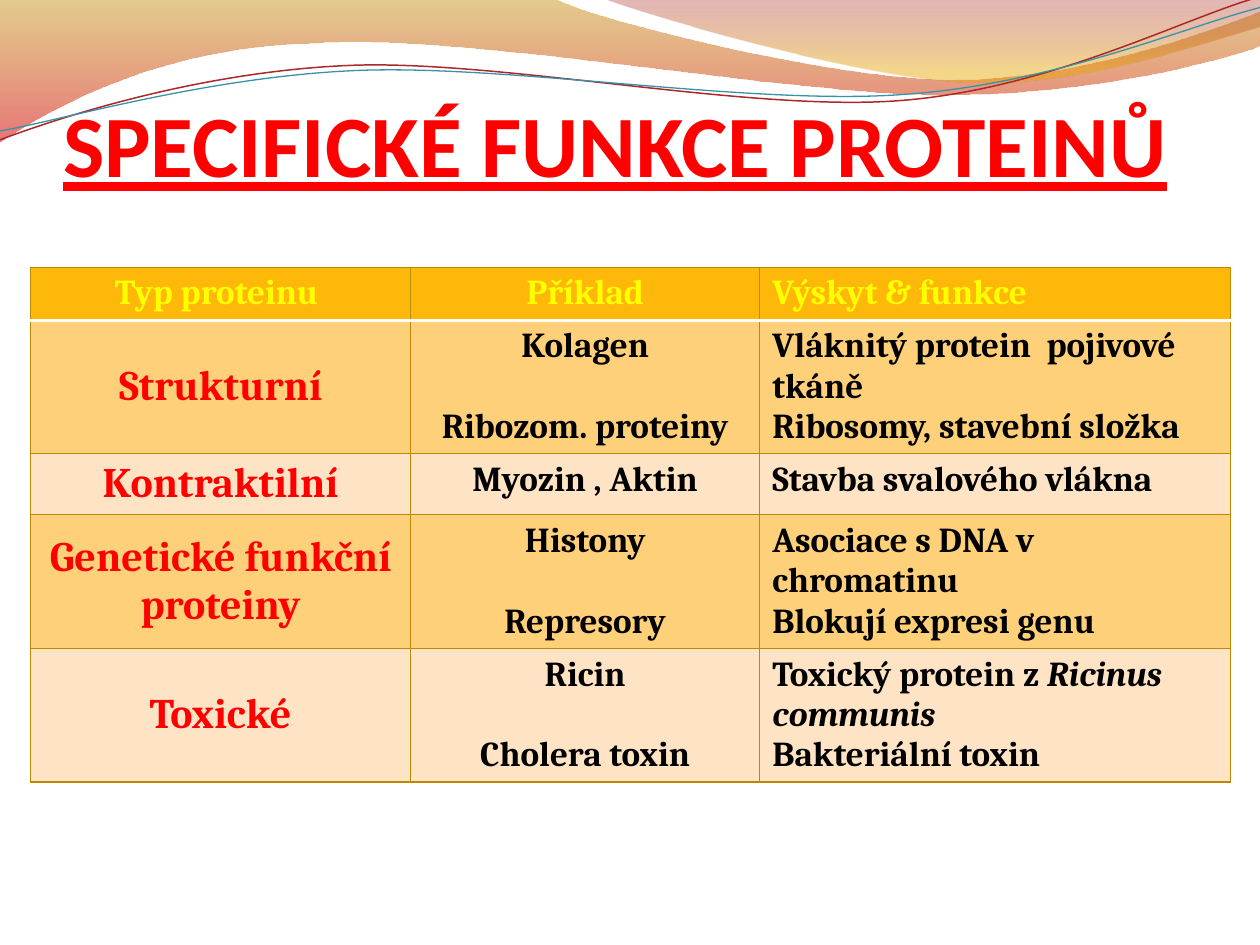
from dataclasses import dataclass

from lxml import etree
from pptx import Presentation, util as u
from pptx.dml.color import RGBColor
from pptx.enum import text as t
from pptx.oxml import ns

WIDE, HIGH = 10, 7.5


@dataclass(frozen=True)
class Theme:
    head: str = "Calibri"
    body: str = "Cambria"
    red: str = "FF0000"
    yellow: str = "FFFF00"
    black: str = "000000"
    white: str = "FFFFFF"
    amber: str = "FEB80A"
    dark: str = "FFD07A"
    light: str = "FFE3C5"
    edge: str = "BF8905"
    title: int = 50
    kind: int = 24
    cell: int = 20


THEME = Theme()

# Each wave: start point, curves (two handles and an end) or straight ends, gradient stops
WAVES = [
    ((0, 0), [(4.4, -0.01), (4.76, 0.17, 6.64, 0.63, 7.58, 0.63),
              (8.53, 0.63, 9.58, 0.26, 10, 0.09), (10.01, 0.36),
              (9.83, 0.44, 8.7, 0.76, 7.46, 0.75),
              (6.22, 0.75, 3.82, 0.28, 2.57, 0.34),
              (1.29, 0.36, 0.46, 0.83, -0.01, 1.13), (0, 0)],
     [(0, "C38B00", 45), (1, "D60305", 55)]),
    ((4.79, -0.01), [(5.09, 0.11, 6.82, 0.62, 7.69, 0.65),
                     (8.56, 0.69, 9.61, 0.32, 10, 0.21), (10, 0), (4.79, -0.01)],
     [(0, "A11112", 30), (0.8, "E9A600", 45)]),
]
STRANDS = [
    ((0, 1.11), [(0.48, 0.93, 1.58, 0.57, 2.77, 0.52),
                 (3.95, 0.47, 5.93, 0.89, 7.13, 0.8),
                 (8.33, 0.71, 9.38, 0.15, 9.98, -0.02)], "AC2829", 0.85),
    ((0, 1.04), [(0.47, 0.96, 1.64, 0.61, 2.83, 0.56),
                 (4.03, 0.51, 5.97, 0.84, 7.17, 0.75),
                 (8.36, 0.67, 9.41, 0.21, 10, 0.06)], "3891A7", 0.75),
]

# A cell is a list of paragraphs; text between underscores is italic
HEADS = [["Typ proteinu "], ["Příklad"], ["Výskyt & funkce"]]
ROWS = [
    [["Strukturní"], ["Kolagen", "Ribozom. proteiny"],
     ["Vláknitý protein  pojivové tkáně", "Ribosomy, stavební složka"]],
    [["Kontraktilní"], ["Myozin , Aktin"], ["Stavba svalového vlákna"]],
    [["Genetické funkční proteiny"], ["Histony", "Represory"],
     ["Asociace s DNA v chromatinu", "Blokují expresi genu"]],
    [["Toxické"], ["Ricin", "Cholera toxin"],
     ["Toxický protein z _Ricinus_", "_communis_", "Bakteriální toxin"]],
]
COLS = [3.02, 2.77, 3.74]
TALL = 0.41


def rgb(code):
    return RGBColor.from_string(code)


def bend(shape, parts):
    """Join each curve's two handles and end into one Bezier segment."""
    lines = iter(shape.element.spPr.findall(".//" + ns.qn("a:lnTo")))
    for part in parts:
        first = next(lines)
        if len(part) == 6:
            first.tag = ns.qn("a:cubicBezTo")
            for _ in range(2):
                extra = next(lines)
                first.append(extra[0])
                extra.getparent().remove(extra)


def outline(slide, start, parts, close):
    spots = [(u.Inches(x), u.Inches(y)) for part in parts
             for x, y in zip(part[::2], part[1::2])]
    pen = slide.shapes.build_freeform(*[u.Inches(n) for n in start])
    pen.add_line_segments(spots, close=close)
    shape = pen.convert_to_shape()
    shape.shadow.inherit = False
    bend(shape, parts)
    return shape


def add_wave(slide, start, parts, stops):
    shape = outline(slide, start, parts, True)
    shape.line.fill.background()
    shape.fill.gradient()
    shape.fill.gradient_angle = 270
    tints = shape.element.spPr.findall(".//" + ns.qn("a:gs"))
    for stop, tint, (place, code, alpha) in zip(shape.fill.gradient_stops, tints, stops):
        stop.position = place
        stop.color.rgb = rgb(code)
        etree.SubElement(tint[0], ns.qn("a:alpha"), val=str(alpha * 1000))


def add_strand(slide, start, parts, code, width):
    shape = outline(slide, start, parts, False)
    shape.fill.background()
    shape.line.color.rgb = rgb(code)
    shape.line.width = u.Pt(width)


def add_run(para, words, font, size, code, italic=False):
    run = para.add_run()
    run.text = words
    run.font.name, run.font.size = font, u.Pt(size)
    run.font.bold, run.font.italic = True, italic
    run.font.color.rgb = rgb(code)
    return run


def add_title(slide, words):
    title = slide.shapes.title
    title.left, title.top = u.Inches(0.05 * WIDE), u.Inches(0.52)
    title.width, title.height = u.Inches(0.9 * WIDE), u.Inches(1.03)
    frame = title.text_frame
    frame.word_wrap = True
    frame.auto_size = t.MSO_AUTO_SIZE.NONE
    frame.vertical_anchor = t.MSO_ANCHOR.BOTTOM
    frame.margin_left = frame.margin_right = frame.margin_bottom = 0
    para = frame.paragraphs[0]
    para.alignment = t.PP_ALIGN.LEFT
    run = add_run(para, words, THEME.head, THEME.title, THEME.red)
    run.font.underline = True
    slide.shapes.element.append(title.element)


def set_edges(cell, row):
    """Frame the cell; a thick white rule parts the header from the rows."""
    props = cell._tc.get_or_add_tcPr()
    for side in "LRTB":
        rule = (row, side) in ((0, "B"), (1, "T"))
        code, width = (THEME.white, 2) if rule else (THEME.edge, 0.75)
        line = etree.SubElement(props, ns.qn("a:ln" + side), w=str(u.Pt(width)))
        fill = etree.SubElement(line, ns.qn("a:solidFill"))
        etree.SubElement(fill, ns.qn("a:srgbClr"), val=code)


def fill_cell(cell, paras, row, col):
    set_edges(cell, row)
    cell.fill.solid()
    shade = (THEME.light, THEME.dark)[row % 2] if row else THEME.amber
    cell.fill.fore_color.rgb = rgb(shade)
    size, code = THEME.cell, THEME.black if row else THEME.yellow
    if col == 0:
        cell.vertical_anchor = t.MSO_ANCHOR.MIDDLE
        if row:
            size, code = THEME.kind, THEME.red
    for i, words in enumerate(paras):
        frame = cell.text_frame
        para = frame.add_paragraph() if i else frame.paragraphs[0]
        para.alignment = t.PP_ALIGN.LEFT if col == 2 else t.PP_ALIGN.CENTER
        if i and col == 1:
            para.space_before = u.Pt(23)
        for j, piece in enumerate(words.split("_")):
            if piece:
                add_run(para, piece, THEME.body, size, code, j % 2 == 1)


def add_grid(slide):
    """Rows start at one height and grow with their text."""
    rows = [HEADS] + ROWS
    box = [u.Inches(n) for n in (0.24, 2.12, sum(COLS), TALL * len(rows))]
    frame = slide.shapes.add_table(len(rows), len(COLS), *box)
    table = frame.table
    for column, width in zip(table.columns, COLS):
        column.width = u.Inches(width)
    for r, cells in enumerate(rows):
        for c, paras in enumerate(cells):
            fill_cell(table.cell(r, c), paras, r, c)
    frame.height = u.Inches(4.23)


def main():
    deck = Presentation()
    deck.slide_width, deck.slide_height = u.Inches(WIDE), u.Inches(HIGH)
    slide = deck.slides.add_slide(deck.slide_layouts[5])
    for wave in WAVES:
        add_wave(slide, *wave)
    for strand in STRANDS:
        add_strand(slide, *strand)
    add_grid(slide)
    add_title(slide, "SPECIFICKÉ FUNKCE PROTEINŮ")
    deck.save("out.pptx")


if __name__ == "__main__":
    main()
